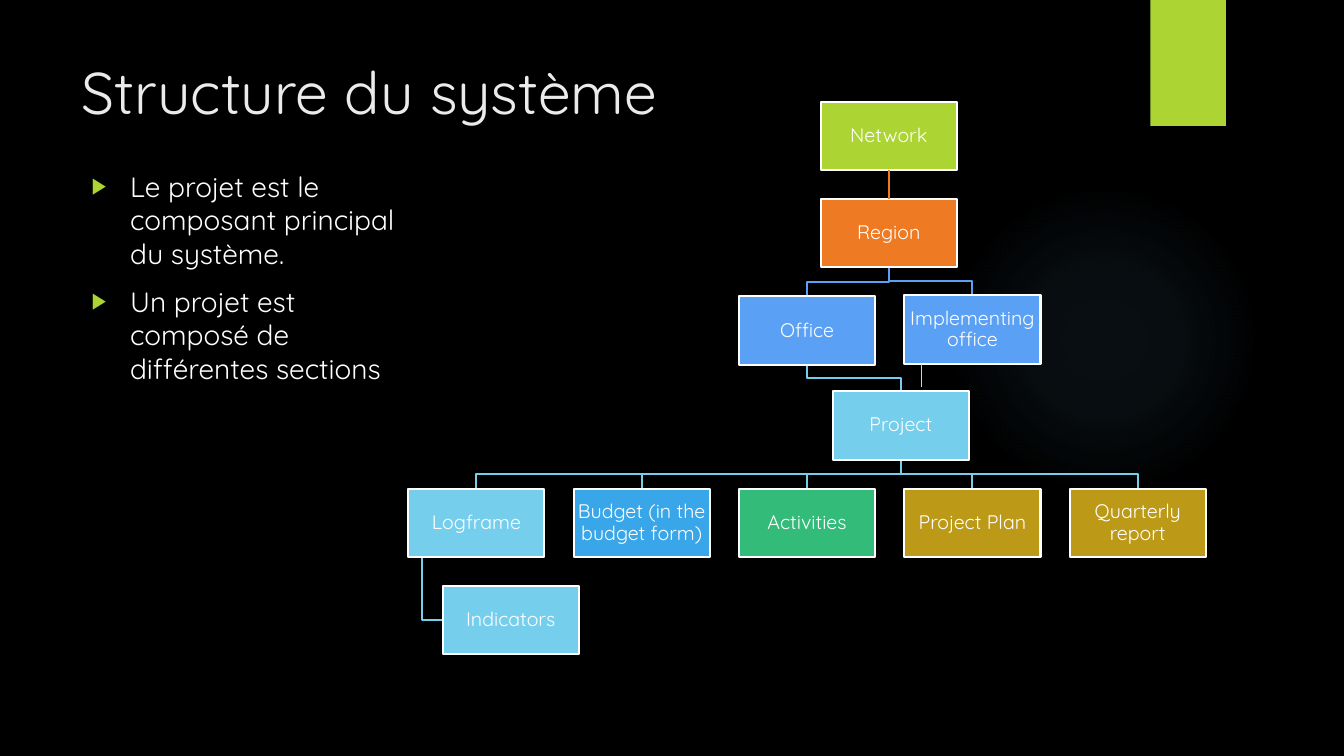
from lxml import etree
from pptx import Presentation
from pptx.dml.color import RGBColor
from pptx.enum.shapes import MSO_CONNECTOR, MSO_SHAPE
from pptx.enum.text import MSO_ANCHOR, MSO_AUTO_SIZE, PP_ALIGN
from pptx.oxml import parse_xml
from pptx.oxml.ns import nsdecls, qn
from pptx.util import Inches, Pt

RECT, OVAL = MSO_SHAPE.RECTANGLE, MSO_SHAPE.OVAL
STRAIGHT = MSO_CONNECTOR.STRAIGHT
TOP, MIDDLE = MSO_ANCHOR.TOP, MSO_ANCHOR.MIDDLE
LEFT, CENTER = PP_ALIGN.LEFT, PP_ALIGN.CENTER
NO_AUTOFIT = MSO_AUTO_SIZE.NONE

FONT = "Quicksand"
BLACK = RGBColor(0x00, 0x00, 0x00)
WHITE = RGBColor(0xFF, 0xFF, 0xFF)
OFF_WHITE = RGBColor(0xEB, 0xEB, 0xEB)
LIME = RGBColor(0xAC, 0xD4, 0x33)
ORANGE = RGBColor(0xEF, 0x7A, 0x24)
BLUE = RGBColor(0x5A, 0xA0, 0xF5)
SKY = RGBColor(0x75, 0xCE, 0xEC)
PALE_SKY = RGBColor(0xAC, 0xE2, 0xF4)
AZURE = RGBColor(0x38, 0xA6, 0xE9)
GREEN = RGBColor(0x32, 0xBB, 0x79)
GOLD = RGBColor(0xBC, 0x9A, 0x17)
GLOW = RGBColor(0x7A, 0xC4, 0xF0)

BOX_W, BOX_H = 1.35, 0.68
COLUMNS = [4.05 + 1.64 * i for i in range(5)]
SECTION_Y = 4.85
SECTIONS = [
    ("Logframe", SKY),
    ("Budget (in the budget form)", AZURE),
    ("Activities", GREEN),
    ("Project Plan", GOLD),
    ("Quarterly report", GOLD),
]
BOXES = {
    "Network": (8.14, 1.01, LIME),
    "Region": (8.14, 1.97, ORANGE),
    "Office": (COLUMNS[2], 2.94, BLUE),
    "Implementing office": (COLUMNS[3], 2.93, BLUE),
    "Project": (8.26, 3.88, SKY),
    "Indicators": (4.39, 5.81, SKY),
}
BOXES.update({label: (x, SECTION_Y, color)
              for x, (label, color) in zip(COLUMNS, SECTIONS)})
LINKS = [
    ("Region", "Office", BLUE),
    ("Region", "Implementing office", BLUE),
    ("Office", "Project", SKY),
] + [("Project", label, SKY) for label, _ in SECTIONS]


def write(tf, *paragraphs, size, color=WHITE, align=LEFT, anchor=TOP,
          inset=None, spacing=1.0, before=0, bullet=False):
    tf.word_wrap = True
    tf.auto_size = NO_AUTOFIT
    tf.vertical_anchor = anchor
    if inset is not None:
        tf.margin_left = tf.margin_right = Inches(inset)
        tf.margin_top = tf.margin_bottom = Inches(inset)
    for i, text in enumerate(paragraphs):
        p = tf.add_paragraph() if i else tf.paragraphs[0]
        if bullet:
            add_bullet(p)
        p.alignment = align
        p.line_spacing = spacing
        p.space_before = Pt(before if i else 0)
        r = p.add_run()
        r.text = text
        r.font.name = FONT
        r.font.size = Pt(size)
        r.font.color.rgb = color


def add_bullet(p):
    pPr = p._p.get_or_add_pPr()
    pPr.set("marL", str(Inches(0.38)))
    pPr.set("indent", str(-Inches(0.38)))
    color = etree.SubElement(pPr, qn("a:buClr"))
    etree.SubElement(color, qn("a:srgbClr"), val=str(LIME))
    etree.SubElement(pPr, qn("a:buSzPct"), val="80000")
    etree.SubElement(pPr, qn("a:buFont"), typeface="Arial")
    etree.SubElement(pPr, qn("a:buChar"), char="▶")


def place(s, x, y, w, h):
    s.left, s.top, s.width, s.height = map(Inches, (x, y, w, h))


def add_plain_shape(shapes, kind, x, y, w, h, fill):
    s = shapes.add_shape(kind, Inches(x), Inches(y), Inches(w), Inches(h))
    s.shadow.inherit = False
    s.fill.solid()
    s.fill.fore_color.rgb = fill
    s.line.fill.background()
    return s


def add_glow(shapes):
    s = add_plain_shape(shapes, OVAL, 9.41, 1.83, 3.08, 3.08, GLOW)
    stops = "".join(
        f'<a:gs pos="{pos}000"><a:srgbClr val="{GLOW}">'
        f'<a:alpha val="{alpha}000"/></a:srgbClr></a:gs>'
        for pos, alpha in ((0, 7), (36, 6), (69, 0), (100, 0)))
    gradient = parse_xml(
        f'<a:gradFill {nsdecls("a")}><a:gsLst>{stops}</a:gsLst>'
        '<a:path path="circle"><a:fillToRect l="50000" t="50000" '
        'r="50000" b="50000"/></a:path></a:gradFill>')
    spPr = s._element.spPr
    spPr.replace(spPr.find(qn("a:solidFill")), gradient)


def add_box(shapes, label):
    x, y, fill = BOXES[label]
    s = add_plain_shape(shapes, RECT, x, y, BOX_W, BOX_H, fill)
    s.line.color.rgb = WHITE
    s.line.width = Pt(1.5)
    write(s.text_frame, label, size=14, align=CENTER, anchor=MIDDLE,
          inset=0.01, spacing=0.9)
    return s


def add_polyline(shapes, points, color):
    start, *rest = [(Inches(x), Inches(y)) for x, y in points]
    builder = shapes.build_freeform(*start)
    builder.add_line_segments(rest, close=False)
    s = builder.convert_to_shape()
    s.shadow.inherit = False
    s.fill.background()
    s.line.color.rgb = color
    s.line.width = Pt(1.5)


def add_elbow(shapes, parent, child, color):
    x1, y1 = BOXES[parent][0] + BOX_W / 2, BOXES[parent][1] + BOX_H
    x2, y2 = BOXES[child][0] + BOX_W / 2, BOXES[child][1]
    middle = (y1 + y2) / 2
    add_polyline(shapes, [(x1, y1), (x1, middle), (x2, middle), (x2, y2)],
                 color)


def add_side_branch(shapes, parent, child, color):
    x = BOXES[parent][0] + BOX_W / 10
    child_x, child_y, _ = BOXES[child]
    y = child_y + BOX_H / 2
    add_polyline(shapes, [(x, BOXES[parent][1] + BOX_H), (x, y),
                          (child_x, y)], color)


def add_line(shapes, x1, y1, x2, y2, color, width):
    line = shapes.add_connector(STRAIGHT, Inches(x1), Inches(y1),
                                Inches(x2), Inches(y2))
    etree.SubElement(line._element.spPr, qn("a:effectLst"))
    line.line.color.rgb = color
    line.line.width = Pt(width)
    return line


def main():
    prs = Presentation()
    prs.slide_width, prs.slide_height = Inches(13.33), Inches(7.5)
    slide = prs.slides.add_slide(prs.slide_layouts[1])
    slide.background.fill.solid()
    slide.background.fill.fore_color.rgb = BLACK
    shapes = slide.shapes

    title, body = shapes.title, slide.placeholders[1]
    place(title, 0.71, 0.5, 10.29, 1.53)
    write(title.text_frame, "Structure du système", size=42, color=OFF_WHITE)
    place(body, 0.81, 1.63, 3.39, 4.59)
    write(body.text_frame,
          "Le projet est le composant principal du système.",
          "Un projet est composé de différentes sections",
          size=20, before=10, bullet=True)

    add_glow(shapes)
    add_plain_shape(shapes, RECT, 11.41, 0, 0.75, 1.25, LIME)

    for parent, child, color in LINKS:
        add_elbow(shapes, parent, child, color)
    add_side_branch(shapes, "Logframe", "Indicators", SKY)
    boxes = {label: add_box(shapes, label) for label in BOXES}

    trunk = add_line(shapes, 8.82, 1.69, 8.82, 1.97, ORANGE, 1.5)
    trunk.begin_connect(boxes["Network"], 2)
    trunk.end_connect(boxes["Region"], 0)
    add_line(shapes, 9.14, 3.84, 9.14, 3.61, PALE_SKY, 0.75)

    prs.save("out.pptx")


if __name__ == "__main__":
    main()
